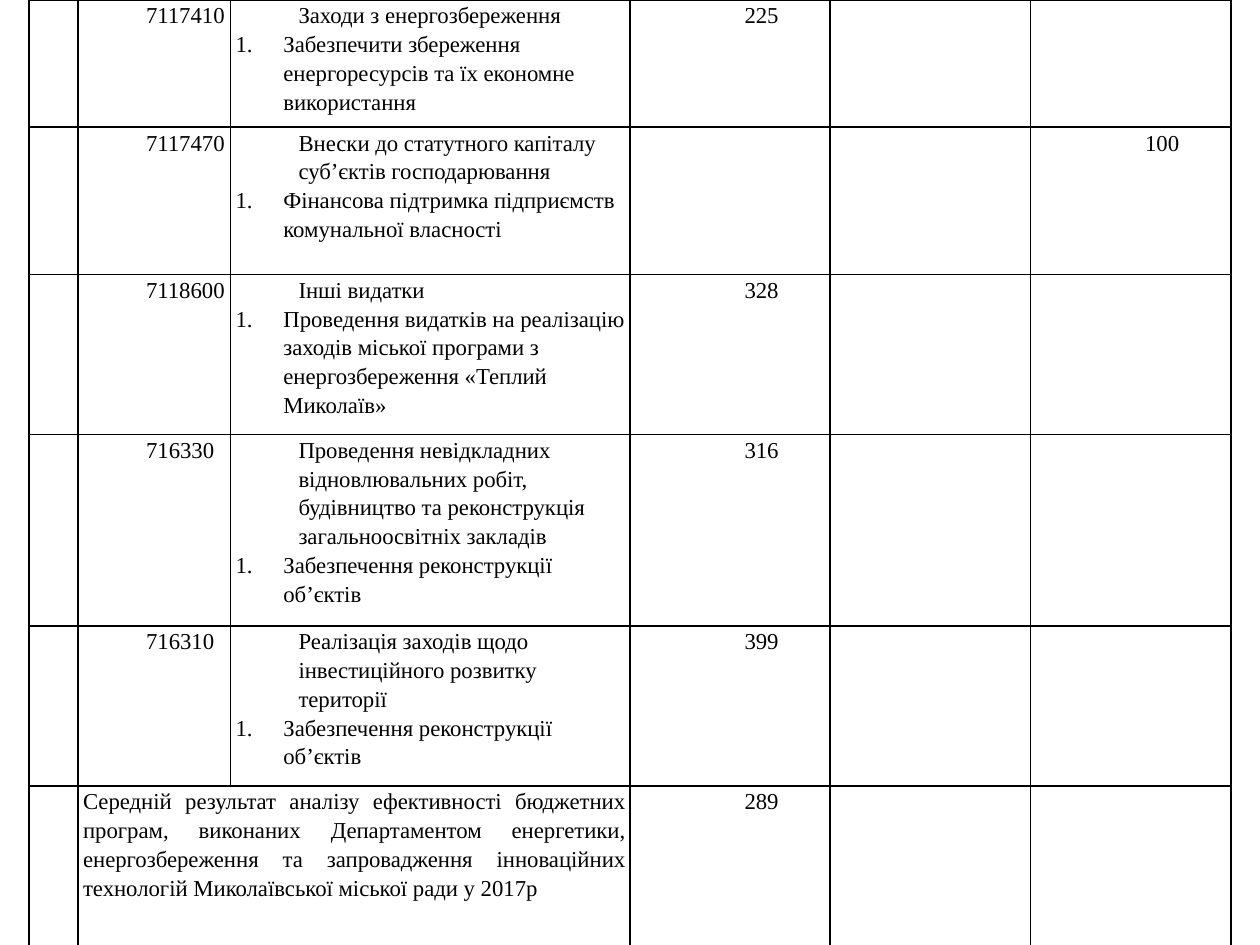
from lxml import etree
from pptx import Presentation
from pptx.dml.color import RGBColor
from pptx.enum import text
from pptx.oxml import ns
from pptx.util import Inches, Pt

BLACK = RGBColor(0, 0, 0)
FONT = "Times New Roman"
COLS = [0.39, 1.21, 3.17, 1.59, 1.59, 1.59]
ROWS = [1.01, 1.17, 1.27, 1.52, 1.27, 1.27]
SCORES = {"high": 3, "mean": 4, "low": 5}
PLANS = [
    ("7117410", "Заходи з енергозбереження",
     "Забезпечити збереження енергоресурсів та їх економне використання", "high", "225"),
    ("7117470", "Внески до статутного капіталу суб’єктів господарювання",
     "Фінансова підтримка підприємств комунальної власності", "low", "100"),
    ("7118600", "Інші видатки",
     "Проведення видатків на реалізацію заходів міської програми з "
     "енергозбереження «Теплий Миколаїв»", "high", "328"),
    ("716330", "Проведення невідкладних відновлювальних робіт, будівництво та "
     "реконструкція загальноосвітніх закладів",
     "Забезпечення реконструкції об’єктів", "high", "316"),
    ("716310", "Реалізація заходів щодо інвестиційного розвитку території",
     "Забезпечення реконструкції об’єктів", "high", "399"),
]
TOTAL = ("Середній результат аналізу ефективності бюджетних програм, виконаних "
         "Департаментом енергетики, енергозбереження та запровадження інноваційних "
         "технологій Миколаївської міської ради у 2017р")


def add_tag(parent, name, **attrs):
    """Append a drawing element and return it."""
    return etree.SubElement(parent, ns.qn(name), attrs)


def style_cell(cell):
    """Clear the fill, set the margins and rule all four sides."""
    cell.fill.background()
    cell.margin_left = cell.margin_right = Inches(0.04)
    cell.margin_top = cell.margin_bottom = 0
    props = cell._tc.get_or_add_tcPr()
    for spot, side in enumerate("LRTB"):
        line = add_tag(props, f"a:ln{side}", w=str(Pt(1)))
        paint = add_tag(line, "a:solidFill")
        add_tag(paint, "a:srgbClr", val=str(BLACK))
        props.insert(spot, line)


def write(cell, words, indent=0.5, align=None, listed=False):
    """Write one paragraph, numbered with a hanging indent if listed."""
    frame = cell.text_frame
    para = frame.add_paragraph() if listed else frame.paragraphs[0]
    props = para._p.get_or_add_pPr()
    props.set("marL", str(Inches(indent)))
    props.set("indent", str(Inches(-indent if listed else 0)))
    if listed:
        add_tag(props, "a:buFont", typeface=FONT)
        add_tag(props, "a:buAutoNum", type="arabicPeriod")
    para.line_spacing = 1.15
    para.alignment = align
    run = para.add_run()
    run.text = words
    run.font.size = Pt(13)
    run.font.name = FONT
    run.font.color.rgb = BLACK


def add_grid(slide, left, top, width, height):
    """Place the table of budget programmes in the given box."""
    grid = slide.shapes.add_table(len(ROWS), len(COLS), left, top, width, height).table
    grid.first_row = grid.horz_banding = False
    for col, size in zip(grid.columns, COLS):
        col.width = Inches(size)
    for row, size in zip(grid.rows, ROWS):
        row.height = Inches(size)
    for cell in grid.iter_cells():
        style_cell(cell)
    mid = text.PP_ALIGN.CENTER
    for row, (code, name, task, level, score) in enumerate(PLANS):
        write(grid.cell(row, 1), code)
        write(grid.cell(row, 2), name)
        write(grid.cell(row, 2), task, 0.38, listed=True)
        write(grid.cell(row, SCORES[level]), score, align=mid)
    last = len(PLANS)
    grid.cell(last, 1).merge(grid.cell(last, 2))
    write(grid.cell(last, 1), TOTAL, 0, text.PP_ALIGN.JUSTIFY)
    write(grid.cell(last, SCORES["high"]), "289", align=mid)


def main():
    """Build and save the slide."""
    deck = Presentation()
    deck.slide_width, deck.slide_height = Inches(10), Inches(7.5)
    slide = deck.slides.add_slide(deck.slide_layouts[6])
    add_grid(slide, Inches(0.23), 0, Inches(sum(COLS)), Inches(sum(ROWS)))
    deck.save("out.pptx")


if __name__ == "__main__":
    main()
